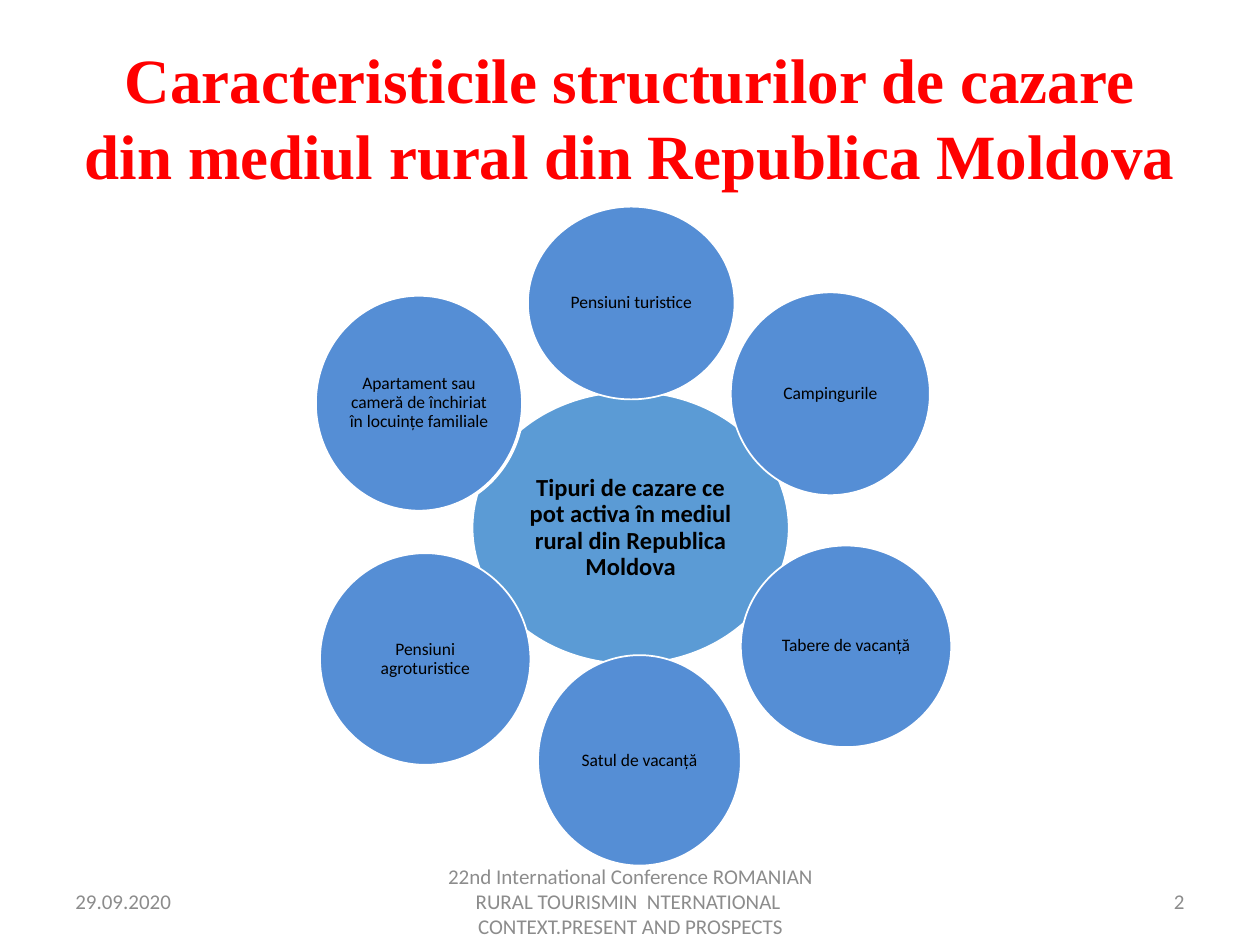
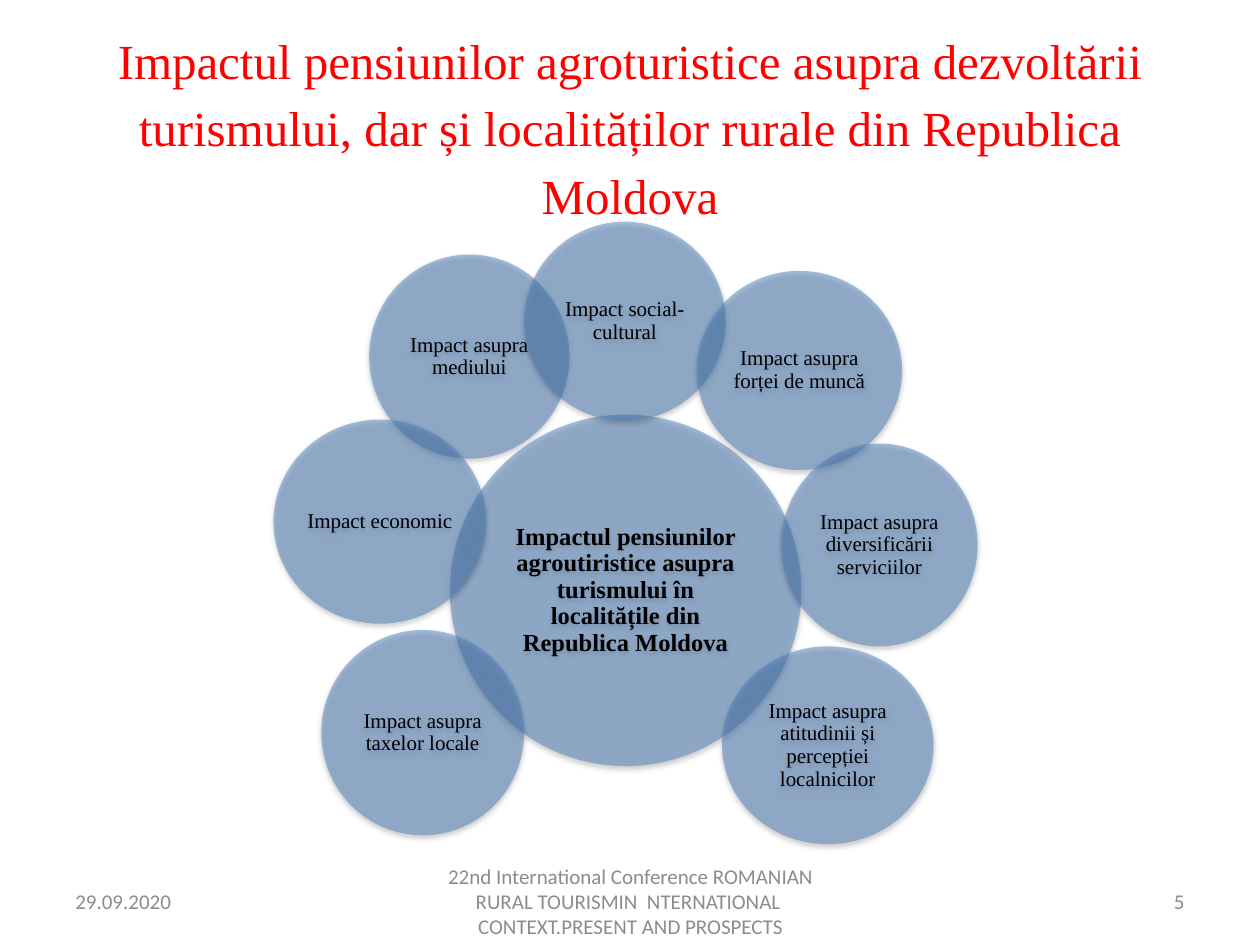
from dataclasses import dataclass
from typing import Optional

from lxml import etree
from pptx import Presentation
from pptx import util as u
from pptx.dml.color import RGBColor
from pptx.enum import shapes, text
from pptx.oxml import ns

COLUMNS, ROWS = 100, 75
SERIF, SANS = "Times New Roman", "Calibri"
RED, GREY, BLACK, WHITE = "FF0000", "8C8C8C", "000000", "FFFFFF"
CONFERENCE = ("22nd International Conference ROMANIAN RURAL TOURISMIN  NTERNATIONAL  "
              "CONTEXT.PRESENT AND PROSPECTS")
LEFT, CENTER, RIGHT = text.PP_ALIGN.LEFT, text.PP_ALIGN.CENTER, text.PP_ALIGN.RIGHT

deck = Presentation()
deck.slide_width, deck.slide_height = u.Inches(10), u.Inches(7.5)


@dataclass(frozen=True)
class Area:
    column: float
    row: float
    columns: float
    rows: float

    def emu(self) -> tuple[int, int, int, int]:
        across, down = deck.slide_width / COLUMNS, deck.slide_height / ROWS
        return (round(self.column * across), round(self.row * down),
                round(self.columns * across), round(self.rows * down))


@dataclass(frozen=True)
class Lettering:
    font: str
    size: float
    color: str = BLACK
    bold: bool = False
    align: text.PP_ALIGN = CENTER
    spacing: float = 1.0


@dataclass(frozen=True)
class Look:
    fill: str
    lettering: Lettering
    inset: float
    line: Optional[float] = None
    opacity: int = 100
    shadow: bool = False


@dataclass(frozen=True)
class Circle:
    label: str
    area: Area
    look: Look


@dataclass(frozen=True)
class Page:
    number: str
    title: str
    title_area: Area
    title_lettering: Lettering
    circles: list[Circle]


def rgb(code: str) -> RGBColor:
    return RGBColor.from_string(code)


def write(frame, words: str, style: Lettering) -> None:
    frame.word_wrap = True
    frame.auto_size = text.MSO_AUTO_SIZE.NONE
    frame.vertical_anchor = text.MSO_ANCHOR.MIDDLE
    paragraph = frame.paragraphs[0]
    paragraph.alignment = style.align
    paragraph.line_spacing = style.spacing
    run = paragraph.add_run()
    run.text = words
    run.font.name = style.font
    run.font.size = u.Pt(style.size)
    run.font.bold = style.bold
    run.font.color.rgb = rgb(style.color)


def set_alpha(color_element, percent: int) -> None:
    etree.SubElement(color_element, ns.qn("a:alpha"), val=str(percent * 1000))


def cast_shadow(shape) -> None:
    effects = shape.element.spPr.find(ns.qn("a:effectLst"))
    shadow = etree.SubElement(
        effects, ns.qn("a:outerShdw"), blurRad=str(u.Pt(3.1)), dist=str(u.Pt(1.6)),
        dir="5400000", rotWithShape="0")
    set_alpha(etree.SubElement(shadow, ns.qn("a:srgbClr"), val=BLACK), 38)


def draw_circle(slide, circle: Circle) -> None:
    look = circle.look
    oval = slide.shapes.add_shape(shapes.MSO_SHAPE.OVAL, *circle.area.emu())
    oval.shadow.inherit = False
    oval.fill.solid()
    oval.fill.fore_color.rgb = rgb(look.fill)
    if look.opacity < 100:
        set_alpha(oval.element.spPr.find(ns.qn("a:solidFill"))[0], look.opacity)
    if look.line is None:
        oval.line.fill.background()
    else:
        oval.line.color.rgb = rgb(WHITE)
        oval.line.width = u.Pt(look.line)
    if look.shadow:
        cast_shadow(oval)
    frame = oval.text_frame
    frame.margin_left = frame.margin_right = u.Inches(look.inset)
    frame.margin_top = frame.margin_bottom = u.Inches(look.inset)
    write(frame, circle.label, look.lettering)


def draw_footer(slide, number: str) -> None:
    for words, column, columns, align in (
            ("29.09.2020", 5, 23.3, LEFT),
            (CONFERENCE, 34.2, 31.7, CENTER),
            (number, 71.7, 23.3, RIGHT)):
        box = slide.shapes.add_textbox(*Area(column, 69.5, columns, 4).emu())
        write(box.text_frame, words, Lettering(SANS, 12, GREY, align=align))


def draw_page(page: Page) -> None:
    slide = deck.slides.add_slide(deck.slide_layouts[5])
    title = slide.shapes.title
    title.left, title.top, title.width, title.height = page.title_area.emu()
    write(title.text_frame, page.title, page.title_lettering)
    draw_footer(slide, page.number)
    for circle in page.circles:
        draw_circle(slide, circle)


LODGING_HUB = Look("5B9BD5", Lettering(SANS, 14, bold=True, spacing=0.9), 0.02, line=1)
LODGING = Look("558ED5", Lettering(SANS, 10, spacing=0.9), 0.01, line=1)
RENTED = Look("558ED5", LODGING.lettering, 0.01, line=2)
IMPACT_HUB = Look("4F81BD", Lettering(SERIF, 14, bold=True, spacing=0.9), 0.02,
                  opacity=50, shadow=True)
IMPACT = Look("4F81BD", Lettering(SERIF, 12, spacing=0.9), 0.02, opacity=50, shadow=True)

PAGES = [
    Page("2", "Caracteristicile structurilor de cazare din mediul rural din Republica Moldova",
         Area(5, 3, 90, 12.5), Lettering(SERIF, 36, RED, bold=True), [
             Circle("Tipuri de cazare ce pot activa în mediul rural din Republica Moldova",
                    Area(37.5, 31.1, 25.1, 21.6), LODGING_HUB),
             Circle("Pensiuni turistice", Area(41.9, 16.4, 16.4, 15.3), LODGING),
             Circle("Campingurile", Area(58, 23.2, 15.8, 16.1), LODGING),
             Circle("Tabere de vacanță", Area(58.8, 43.3, 16.7, 16), LODGING),
             Circle("Satul de vacanță", Area(42.7, 52, 16.1, 16.7), LODGING),
             Circle("Pensiuni agroturistice", Area(25.4, 43.9, 16.7, 16.8), LODGING),
             Circle("Apartament sau cameră de închiriat în locuințe familiale",
                    Area(25, 23.4, 16.5, 17.2), RENTED),
         ]),
    Page("5", "Impactul pensiunilor agroturistice asupra dezvoltării turismului, "
              "dar și localităților rurale din Republica Moldova",
         Area(5, 3.5, 90, 12.5), Lettering(SERIF, 28, RED, spacing=1.15), [
             Circle("Impactul pensiunilor agroutiristice asupra turismului în localitățile "
                    "din Republica Moldova", Area(35.7, 32.9, 27.9, 27.9), IMPACT_HUB),
             Circle("Impact asupra mediului", Area(29.3, 20.2, 15.9, 16.2), IMPACT),
             Circle("Impact social-cultural", Area(41.6, 17.6, 16, 15.8), IMPACT),
             Circle("Impact asupra forței de muncă", Area(55.3, 21.5, 16.3, 15.8), IMPACT),
             Circle("Impact asupra diversificării serviciilor",
                    Area(62, 35.2, 15.6, 16.1), IMPACT),
             Circle("Impact asupra atitudinii și percepției localnicilor",
                    Area(57.3, 51.3, 16.8, 15.7), IMPACT),
             Circle("Impact asupra taxelor locale", Area(25.5, 50, 16.1, 16.3), IMPACT),
             Circle("Impact economic", Area(21.7, 33.3, 16.9, 16.2), IMPACT),
         ]),
]


def main() -> None:
    for page in PAGES:
        draw_page(page)
    deck.save("out.pptx")


if __name__ == "__main__":
    main()
